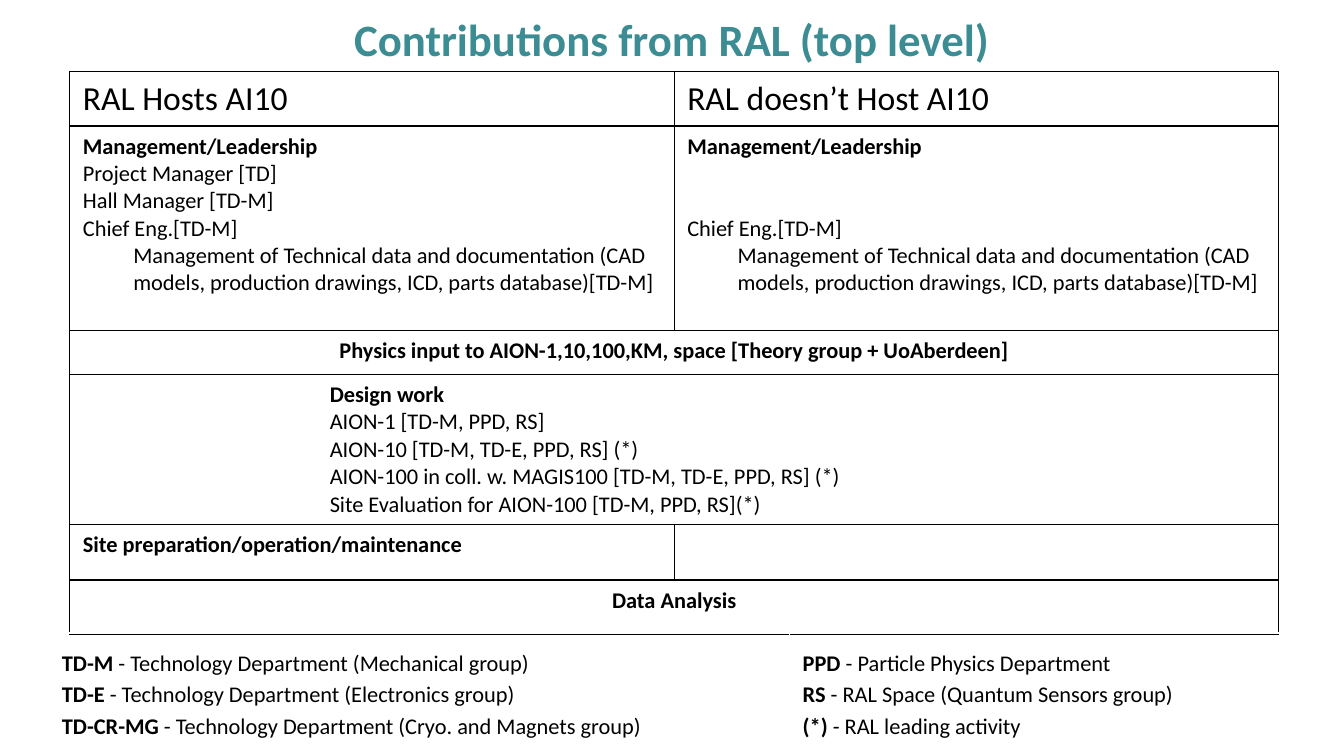
from dataclasses import dataclass

import pptx
import pptx.dml.color
import pptx.enum.text
import pptx.oxml
import pptx.oxml.ns
import pptx.util
from pptx.util import Cm

FONT = "Calibri"
BLACK = "000000"
TEAL = "3C8C93"
CENTER = pptx.enum.text.PP_ALIGN.CENTER
MIDDLE = pptx.enum.text.MSO_ANCHOR.MIDDLE


@dataclass
class Line:
    bold: str = ""
    plain: str = ""
    size: int = 16
    color: str = BLACK
    align: int = None
    level: int = 0
    indent: int = 0
    before: float = 0
    spacing: float = None


def color_of(value):
    return pptx.dml.color.RGBColor.from_string(value)


def write_line(paragraph, line):
    if line.indent:
        paragraph._p.get_or_add_pPr().set("marL", str(line.indent))
    paragraph.level = line.level
    paragraph.alignment = line.align
    paragraph.line_spacing = line.spacing
    if line.before:
        paragraph.space_before = pptx.util.Pt(line.before)
    for text, bold in ((line.bold, True), (line.plain, False)):
        if text:
            run = paragraph.add_run()
            run.text = text
            run.font.name = FONT
            run.font.size = pptx.util.Pt(line.size)
            run.font.bold = bold
            run.font.color.rgb = color_of(line.color)


def write_lines(text_frame, lines):
    for index, line in enumerate(lines):
        paragraph = text_frame.add_paragraph() if index else text_frame.paragraphs[0]
        write_line(paragraph, line)


def add_borders(cell):
    properties = cell._tc.get_or_add_tcPr()
    namespace = pptx.oxml.ns.nsdecls("a")
    for side in ("lnL", "lnR", "lnT", "lnB"):
        properties.append(pptx.oxml.parse_xml(
            f'<a:{side} {namespace} w="12700"><a:solidFill>'
            f'<a:srgbClr val="{BLACK}"/></a:solidFill></a:{side}>'))


def add_table(slide, left, top, widths, heights, rows, inset, bordered):
    frame = slide.shapes.add_table(
        len(heights), len(widths), left, top, sum(widths), sum(heights))
    table = frame.table
    table.first_row = False
    table.horz_banding = False
    for column, width in zip(table.columns, widths):
        column.width = width
    for row, height in zip(table.rows, heights):
        row.height = height
    for cell in table.iter_cells():
        cell.margin_left = cell.margin_right = Cm(0.33)
        cell.margin_top = cell.margin_bottom = inset
        if bordered:
            add_borders(cell)
        cell.fill.background()
    for row_index, cells in enumerate(rows):
        if len(cells) < len(widths):
            table.cell(row_index, 0).merge(table.cell(row_index, len(widths) - 1))
        for column_index, lines in enumerate(cells):
            write_lines(table.cell(row_index, column_index).text_frame, lines)


def add_title(slide, width, text):
    shape = slide.shapes.add_textbox(0, Cm(-0.03), width, Cm(2))
    text_frame = shape.text_frame
    text_frame.word_wrap = True
    text_frame.vertical_anchor = MIDDLE
    write_lines(text_frame, [Line(bold=text, size=32, color=TEAL, align=CENTER)])


def add_contributions(slide):
    management = Line(bold="Management/Leadership")
    documentation = Line(
        plain="Management of Technical data and documentation (CAD models, "
              "production drawings, ICD, parts database)[TD-M]",
        level=1, indent=Cm(1.27))
    chief = "Chief Eng.[TD-M]"
    design_indent = Cm(6.22)
    design_tasks = (
        "AION-1 [TD-M, PPD, RS]",
        "AION-10 [TD-M, TD-E, PPD, RS] (*)",
        "AION-100 in coll. w. MAGIS100 [TD-M, TD-E, PPD, RS] (*)",
        "Site Evaluation for AION-100 [TD-M, PPD, RS](*)",
    )
    design = [Line(bold="Design work", indent=design_indent)]
    design += [Line(plain=task, indent=design_indent) for task in design_tasks]
    hosting = [management, Line(plain="Project Manager [TD]"),
               Line(plain="Hall Manager [TD-M]"), Line(plain=chief), documentation]
    not_hosting = [management, Line(plain=chief, before=39), documentation]
    physics = "Physics input to AION-1,10,100,KM, space [Theory group + UoAberdeen]"
    rows = [
        [[Line(plain="RAL Hosts AI10", size=24)],
         [Line(plain="RAL doesn’t Host AI10", size=24)]],
        [hosting, not_hosting],
        [[Line(bold=physics, align=CENTER)]],
        [design],
        [[Line(bold="Site preparation/operation/maintenance")], []],
        [[Line(bold="Data Analysis", align=CENTER)]],
    ]
    heights = [Cm(height) for height in (1.37, 5.16, 1.1, 3.74, 1.39, 1.37)]
    add_table(slide, Cm(1.76), Cm(1.8), [Cm(15.23)] * 2, heights, rows, Cm(0.17), True)


def add_legend(slide):
    groups = (
        (("TD-M", "Technology Department (Mechanical group)"),
         ("TD-E", "Technology Department (Electronics group)"),
         ("TD-CR-MG", "Technology Department (Cryo. and Magnets group)")),
        (("PPD", "Particle Physics Department"),
         ("RS", "RAL Space (Quantum Sensors group)"),
         ("(*)", "RAL leading activity")),
    )
    cells = [[Line(bold=key, plain=f" - {meaning}", spacing=1.15)
              for key, meaning in group] for group in groups]
    add_table(slide, Cm(1.23), Cm(15.95), [Cm(18.67), Cm(13.39)], [Cm(3.63)],
              [cells], Cm(0.33), False)


def main():
    presentation = pptx.Presentation()
    presentation.slide_width = Cm(33.87)
    presentation.slide_height = Cm(19.05)
    slide = presentation.slides.add_slide(presentation.slide_layouts[6])
    add_contributions(slide)
    add_title(slide, presentation.slide_width, "Contributions from RAL (top level)")
    add_legend(slide)
    presentation.save("out.pptx")


if __name__ == "__main__":
    main()
